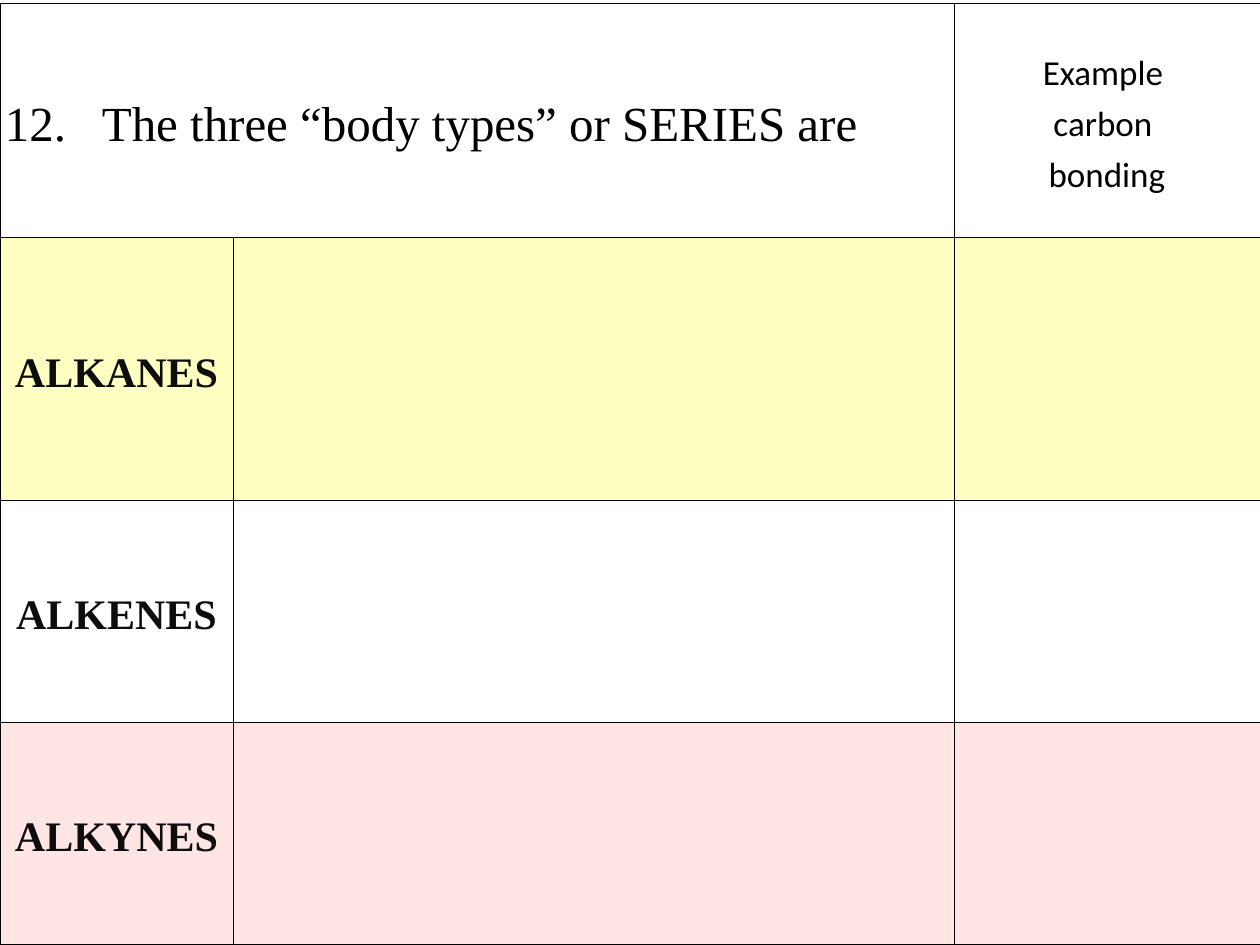
import pptx
import pptx.util
import pptx.dml.color
import pptx.enum.text
import pptx.oxml.ns
import lxml.etree

PX = 914400 // 126
SERIF, SANS = "Times New Roman", "Calibri"
ALIGN = pptx.enum.text.PP_ALIGN
COLUMNS = [233, 721, 306]
ROWS = [234, 263, 222, 222]
SERIES = [("ALKANES", "FFFFC1"), ("ALKENES", None), ("ALKYNES", "FFE6E5")]


def px(length):
    return pptx.util.Emu(length * PX)


def color(value):
    return pptx.dml.color.RGBColor.from_string(value)


def write(cell, lines, font=SERIF, size=24, ink="000000", bold=False,
          align=ALIGN.CENTER, hanging=0):
    """Write one paragraph, with line breaks between its lines."""
    paragraph = cell.text_frame.paragraphs[0]
    paragraph.alignment = align
    paragraph.line_spacing = 1.19
    paragraph.space_after = pptx.util.Pt(6)
    if hanging:
        properties = paragraph._p.get_or_add_pPr()
        properties.set("marL", str(px(hanging)))
        properties.set("indent", str(px(-hanging)))
    for number, line in enumerate(lines):
        if number:
            paragraph.add_line_break()
        run = paragraph.add_run()
        run.text = line
        run.font.name = font
        run.font.size = pptx.util.Pt(size)
        run.font.bold = bold
        run.font.color.rgb = color(ink)


def format_cell(cell, fill=None):
    cell.vertical_anchor = pptx.enum.text.MSO_ANCHOR.MIDDLE
    cell.margin_left = cell.margin_right = px(5)
    cell.margin_top = cell.margin_bottom = px(5)
    if fill:
        cell.fill.solid()
        cell.fill.fore_color.rgb = color(fill)
    else:
        cell.fill.background()
    # Borders come before the fill in the cell properties
    properties = cell._tc.get_or_add_tcPr()
    qn = pptx.oxml.ns.qn
    for position, side in enumerate(("a:lnL", "a:lnR", "a:lnT", "a:lnB")):
        border = lxml.etree.Element(qn(side), w=str(pptx.util.Pt(0.25)))
        solid = lxml.etree.SubElement(border, qn("a:solidFill"))
        lxml.etree.SubElement(solid, qn("a:srgbClr"), val="000000")
        properties.insert(position, border)


def add_series_table(slide, left, top, width, height):
    table = slide.shapes.add_table(len(ROWS), len(COLUMNS), px(left), px(top),
                                   px(width), px(height)).table
    table.first_row = table.horz_banding = False
    for column, size in zip(table.columns, COLUMNS):
        column.width = px(size)
    fills = [None] + [fill for _, fill in SERIES]
    for row, size, fill in zip(table.rows, ROWS, fills):
        row.height = px(size)
        for cell in row.cells:
            format_cell(cell, fill)

    # Heading row
    table.cell(0, 0).merge(table.cell(0, 1))
    write(table.cell(0, 0), ["12.\tThe three “body types” or SERIES are"],
          size=28, align=ALIGN.LEFT, hanging=97)
    write(table.cell(0, 2), ["Example ", "carbon ", "bonding"],
          font=SANS, size=20)

    # One row for each series
    for row, (name, _) in enumerate(SERIES, start=1):
        write(table.cell(row, 0), [name], ink="0D0D0D", bold=True)


def main():
    presentation = pptx.Presentation()
    presentation.slide_width = pptx.util.Inches(10)
    presentation.slide_height = pptx.util.Inches(7.5)
    slide = presentation.slides.add_slide(presentation.slide_layouts[6])
    add_series_table(slide, 0, 3, sum(COLUMNS), sum(ROWS))
    presentation.save("out.pptx")


if __name__ == "__main__":
    main()
